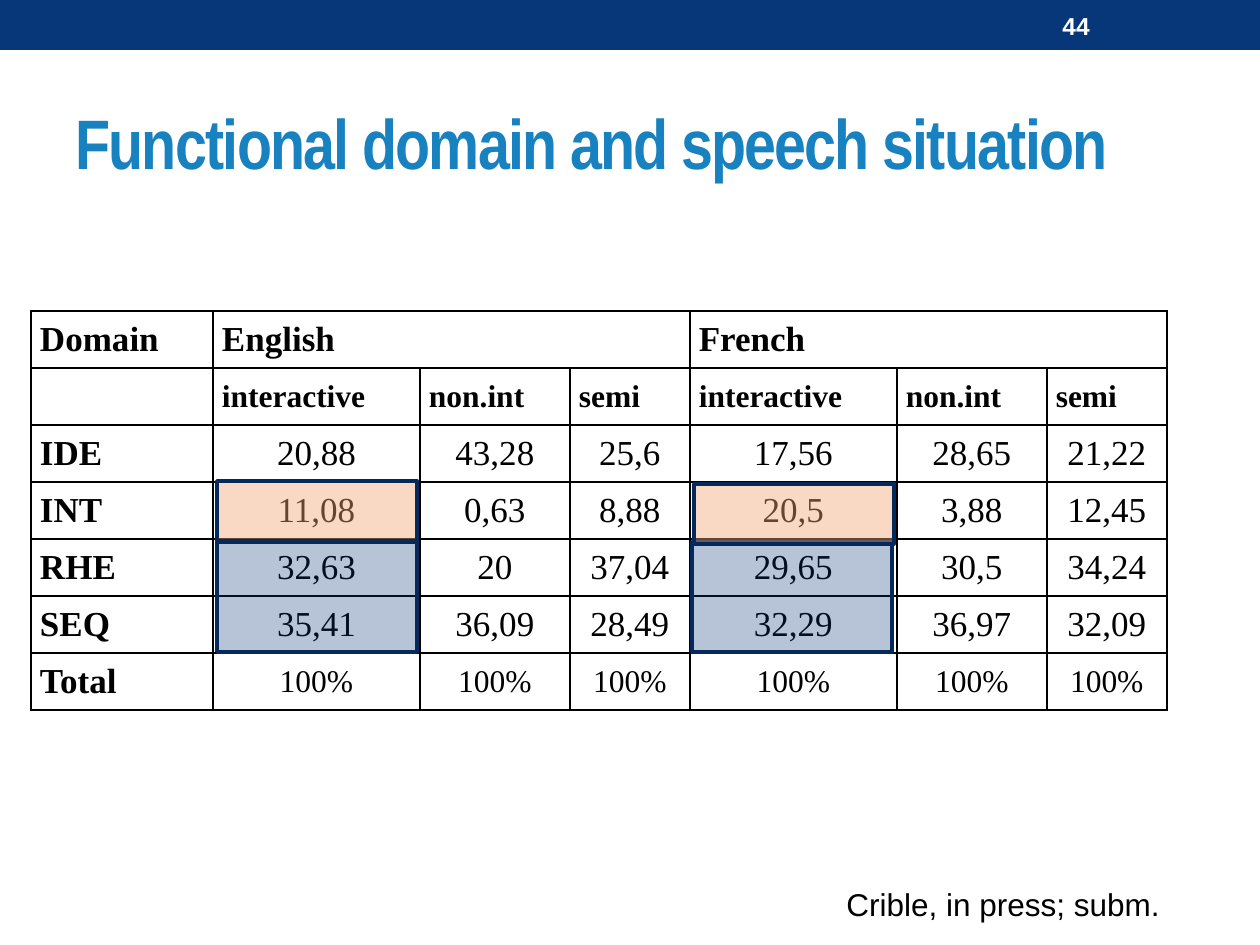
from dataclasses import dataclass

from lxml.etree import SubElement
from pptx import Presentation
from pptx.dml.color import RGBColor
from pptx.enum.shapes import MSO_SHAPE
from pptx.enum.text import MSO_ANCHOR, PP_ALIGN
from pptx.oxml.ns import qn
from pptx.util import Emu, Pt


@dataclass(frozen=True)
class Theme:
    navy: str = "073779"
    edge: str = "05295A"
    blue: str = "1782BF"
    peach: str = "F3A373"
    black: str = "000000"
    white: str = "FFFFFF"
    sans: str = "Arial"
    narrow: str = "Arial Narrow"
    serif: str = "Times New Roman"
    title: int = 40
    large: int = 20
    body: int = 18
    small: int = 14


def px(num):
    return Emu(round(num * 914400 / 126))


def rgb(color):
    return RGBColor.from_string(color)


def write(frame, text, font, size, color, bold=False, align=PP_ALIGN.LEFT, track=0):
    para = frame.paragraphs[0]
    para.alignment = align
    run = para.add_run()
    run.text = text
    run.font.name = font
    run.font.size = Pt(size)
    run.font.bold = bold
    run.font.color.rgb = rgb(color)
    if track:
        run.font._element.set("spc", str(track * 100))


class Deck:
    def __init__(self, theme, wide, high):
        self.theme = theme
        self.show = Presentation()
        self.show.slide_width = px(wide)
        self.show.slide_height = px(high)
        self.slide = self.show.slides.add_slide(self.show.slide_layouts[6])

    def text(self, box, text, anchor=MSO_ANCHOR.MIDDLE, **style):
        frame = self.slide.shapes.add_textbox(*map(px, box)).text_frame
        frame.word_wrap = True
        frame.vertical_anchor = anchor
        write(frame, text, **style)

    def rect(self, box, fill, alpha=100, line=None):
        shape = self.slide.shapes.add_shape(MSO_SHAPE.RECTANGLE, *map(px, box))
        shape.shadow.inherit = False
        shape.fill.solid()
        shape.fill.fore_color.rgb = rgb(fill)
        if alpha < 100:
            tone = shape.fill._xPr.find(qn("a:solidFill"))[0]
            SubElement(tone, qn("a:alpha"), val=str(alpha * 1000))
        if line:
            shape.line.color.rgb = rgb(line)
            shape.line.width = Pt(2.08)
        else:
            shape.line.fill.background()

    def border(self, cell):
        props = cell._tc.get_or_add_tcPr()
        for spot, side in enumerate(("lnL", "lnR", "lnT", "lnB")):
            line = props.makeelement(qn(f"a:{side}"), {"w": str(Pt(1))})
            fill = SubElement(line, qn("a:solidFill"))
            SubElement(fill, qn("a:srgbClr"), val=self.theme.black)
            props.insert(spot, line)

    def table(self, left, top, cols, high, rows, spans):
        grid = self.slide.shapes.add_table(
            len(rows), len(cols), px(left), px(top), px(sum(cols)), px(high * len(rows))
        ).table
        for col, wide in zip(grid.columns, cols):
            col.width = px(wide)
        for row in grid.rows:
            row.height = px(high)
        for start, end in spans:
            grid.cell(0, start).merge(grid.cell(0, end))
        for y, row in enumerate(rows):
            for x, text in enumerate(row):
                self.cell(grid.cell(y, x), text, y, x, len(rows) - 1)

    def cell(self, cell, text, y, x, last):
        look = self.theme
        cell.fill.background()
        self.border(cell)
        cell.vertical_anchor = MSO_ANCHOR.MIDDLE
        cell.margin_left = cell.margin_right = px(9)
        cell.margin_top = cell.margin_bottom = 0
        if text:
            head = y < 2 or x == 0
            size = look.body if x and y in (1, last) else look.large
            align = PP_ALIGN.LEFT if head else PP_ALIGN.CENTER
            write(cell.text_frame, text, look.serif, size, look.black, head, align)

    def save(self):
        self.show.save("out.pptx")


def main():
    look = Theme()
    deck = Deck(look, 1260, 945)
    deck.rect((0, 0, 1260, 50), look.navy)
    deck.text((63, 73, 1134, 136), "Functional domain and speech situation",
              font=look.narrow, size=look.title, color=look.blue, bold=True, track=-1)
    deck.text((1050, 3, 147, 45), "44",
              font=look.sans, size=look.small, color=look.white, bold=True)
    modes = ["interactive", "non.int", "semi"]
    rows = [
        ["Domain", "English", "", "", "French", "", ""],
        [""] + modes * 2,
        ["IDE", "20,88", "43,28", "25,6", "17,56", "28,65", "21,22"],
        ["INT", "11,08", "0,63", "8,88", "20,5", "3,88", "12,45"],
        ["RHE", "32,63", "20", "37,04", "29,65", "30,5", "34,24"],
        ["SEQ", "35,41", "36,09", "28,49", "32,29", "36,97", "32,09"],
        ["Total"] + ["100%"] * 6,
    ]
    deck.table(31, 311, [182] + [207, 150, 120] * 2, 57, rows, [(1, 3), (4, 6)])
    deck.text((834, 879, 411, 50), "Crible, in press; subm.", anchor=MSO_ANCHOR.TOP,
              font=look.sans, size=look.body, color=look.black)
    for left in (217, 692):
        deck.rect((left, 542, 200, 110), look.navy, 29, look.edge)
    for left, top in ((217, 481), (694, 484)):
        deck.rect((left, top, 200, 60), look.peach, 42, look.edge)
    deck.save()


if __name__ == "__main__":
    main()
